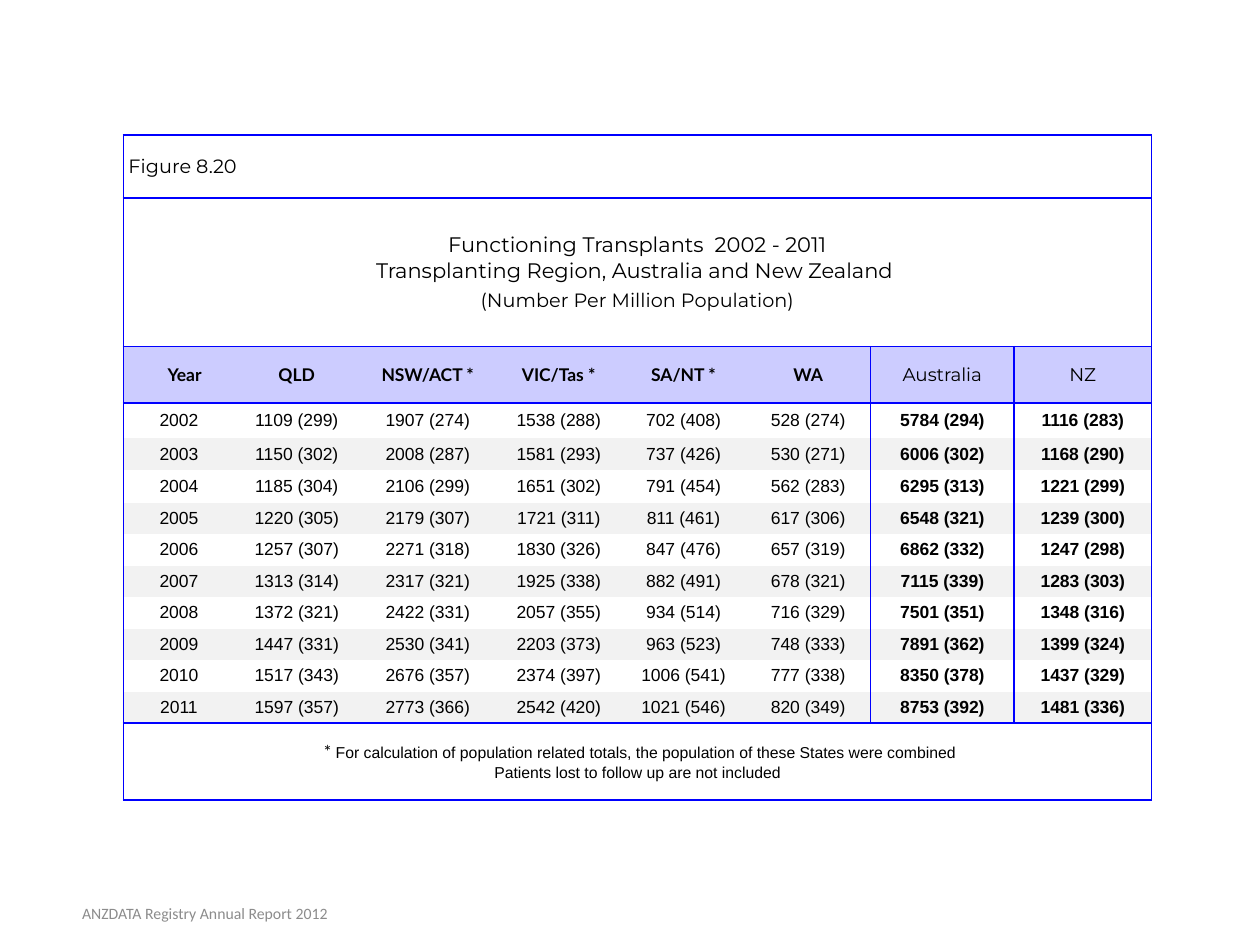
import pptx
import pptx.dml.color
import pptx.enum.text
import pptx.oxml
import pptx.oxml.ns
import pptx.util

Inches = pptx.util.Inches
Pt = pptx.util.Pt
CENTER = pptx.enum.text.PP_ALIGN.CENTER
MIDDLE = pptx.enum.text.MSO_ANCHOR.MIDDLE

RULE_BLUE = "0000FF"
HEADER_LILAC = "CCCCFF"
BAND_GREY = "F2F2F2"
NO_STYLE = "{2D5ABB26-0587-4C30-8999-92F81FD0307C}"

COLUMN_WIDTHS = [0.88, 0.99, 1.09, 0.99, 0.99, 0.99, 1.14, 1.09]
ROW_HEIGHTS = [0.5, 1.18, 0.45, 0.28, 0.25, 0.26] + [0.25] * 7 + [0.61]
HEADER_ROW, FIRST_YEAR_ROW, NOTE_ROW = 2, 3, 13
FULL_WIDTH_ROWS = (0, 1, NOTE_ROW)
COUNTRY_COLUMNS = (6, 7)

MONTSERRAT = {"name": "Montserrat", "size": Pt(11), "bold": False}
TITLE = {**MONTSERRAT, "size": Pt(12)}
COUNTRY = {**MONTSERRAT, "size": Pt(10.5)}
STATE = {"name": "Lato", "size": Pt(10), "bold": True}
NUMBER = {"name": "Arial", "size": Pt(10), "bold": False}
TOTAL = {**NUMBER, "bold": True}
NOTE = {**NUMBER, "size": Pt(9)}
ASTERISK = {**STATE, "bold": False}
FOOTER = {"name": "Calibri", "size": Pt(9), "bold": False}

REGIONS = ["Year", "QLD", "NSW/ACT *", "VIC/Tas *", "SA/NT *", "WA", "Australia", "NZ"]
TRANSPLANTS = [
    ["2002", "1109 (299)", "1907 (274)", "1538 (288)", "702 (408)", "528 (274)", "5784 (294)", "1116 (283)"],
    ["2003", "1150 (302)", "2008 (287)", "1581 (293)", "737 (426)", "530 (271)", "6006 (302)", "1168 (290)"],
    ["2004", "1185 (304)", "2106 (299)", "1651 (302)", "791 (454)", "562 (283)", "6295 (313)", "1221 (299)"],
    ["2005", "1220 (305)", "2179 (307)", "1721 (311)", "811 (461)", "617 (306)", "6548 (321)", "1239 (300)"],
    ["2006", "1257 (307)", "2271 (318)", "1830 (326)", "847 (476)", "657 (319)", "6862 (332)", "1247 (298)"],
    ["2007", "1313 (314)", "2317 (321)", "1925 (338)", "882 (491)", "678 (321)", "7115 (339)", "1283 (303)"],
    ["2008", "1372 (321)", "2422 (331)", "2057 (355)", "934 (514)", "716 (329)", "7501 (351)", "1348 (316)"],
    ["2009", "1447 (331)", "2530 (341)", "2203 (373)", "963 (523)", "748 (333)", "7891 (362)", "1399 (324)"],
    ["2010", "1517 (343)", "2676 (357)", "2374 (397)", "1006 (541)", "777 (338)", "8350 (378)", "1437 (329)"],
    ["2011", "1597 (357)", "2773 (366)", "2542 (420)", "1021 (546)", "820 (349)", "8753 (392)", "1481 (336)"],
]


def color(value):
    """Turn a hex string into a colour."""
    return pptx.dml.color.RGBColor.from_string(value)


def set_values(target, values):
    """Set each named attribute of the target."""
    for name, value in values.items():
        setattr(target, name, value)


def write_line(paragraph, parts, ink="000000", **layout):
    """Fill a paragraph with (wording, font values) parts."""
    set_values(paragraph, layout)
    for wording, font_values in parts:
        run = paragraph.add_run()
        run.text = wording
        set_values(run.font, font_values)
        run.font.color.rgb = color(ink)


def draw_rules(cell, row, column):
    """Rule the cell edges that divide the sections of the table."""
    full_width = row in FULL_WIDTH_ROWS
    ruled = {
        "L": column == 0 or (not full_width and column in COUNTRY_COLUMNS),
        "R": column == 7 or (not full_width and column + 1 in COUNTRY_COLUMNS),
        "T": row <= FIRST_YEAR_ROW or row == NOTE_ROW,
        "B": row <= HEADER_ROW or row >= NOTE_ROW - 1,
    }
    if full_width:
        ruled["R"] = True
    properties = cell._tc.get_or_add_tcPr()
    for side, visible in ruled.items():
        width = Pt(1) if visible else 0
        paint = f'<a:solidFill><a:srgbClr val="{RULE_BLUE}"/></a:solidFill>' if visible else "<a:noFill/>"
        namespace = pptx.oxml.ns.nsdecls("a")
        properties.append(pptx.oxml.parse_xml(f'<a:ln{side} {namespace} w="{width}">{paint}</a:ln{side}>'))


def fill_cell(cell, row):
    """Colour the header row and every second year."""
    if row == HEADER_ROW or (FIRST_YEAR_ROW < row < NOTE_ROW and row % 2 == 0):
        cell.fill.solid()
        cell.fill.fore_color.rgb = color(HEADER_LILAC if row == HEADER_ROW else BAND_GREY)
    else:
        cell.fill.background()


def add_registry_table(slide):
    """Add the ruled table frame and return its table."""
    frame = slide.shapes.add_table(
        len(ROW_HEIGHTS), len(COLUMN_WIDTHS), Inches(0.98), Inches(1.07),
        Inches(sum(COLUMN_WIDTHS)), Inches(sum(ROW_HEIGHTS)))
    table = frame.table
    set_values(table, {"first_row": False, "horz_banding": False})
    table._tbl.tblPr.find(pptx.oxml.ns.qn("a:tableStyleId")).text = NO_STYLE
    for column, width in zip(table.columns, COLUMN_WIDTHS):
        column.width = Inches(width)
    margins = {"margin_left": Inches(0.04), "margin_right": Inches(0.04),
               "margin_top": Inches(0.02), "margin_bottom": Inches(0.02)}
    for row, height in enumerate(ROW_HEIGHTS):
        table.rows[row].height = Inches(height)
        for column in range(len(COLUMN_WIDTHS)):
            cell = table.cell(row, column)
            set_values(cell, {**margins, "vertical_anchor": MIDDLE})
            draw_rules(cell, row, column)
            fill_cell(cell, row)
    for row in FULL_WIDTH_ROWS:
        table.cell(row, 0).merge(table.cell(row, len(COLUMN_WIDTHS) - 1))
    return table


def write_headings(table):
    """Write the figure number, title lines and notes."""
    write_line(table.cell(0, 0).text_frame.paragraphs[0], [("Figure 8.20", MONTSERRAT)])
    title = table.cell(1, 0).text_frame
    write_line(title.paragraphs[0], [("Functioning Transplants  2002 - 2011", TITLE)], alignment=CENTER)
    write_line(title.add_paragraph(), [("Transplanting Region, Australia and New Zealand ", TITLE)],
               alignment=CENTER)
    write_line(title.add_paragraph(), [("(Number Per Million Population)", MONTSERRAT)],
               alignment=CENTER, space_before=Pt(3))
    notes = table.cell(NOTE_ROW, 0).text_frame
    combined = "For calculation of population related totals, the population of these States were combined"
    write_line(notes.paragraphs[0], [(" * ", ASTERISK), (combined, NOTE)], alignment=CENTER)
    write_line(notes.add_paragraph(), [("Patients lost to follow up are not included", NOTE)],
               alignment=CENTER, space_before=Pt(1), space_after=Pt(2))


def write_counts(table):
    """Write the region headers and the yearly counts."""
    for row, values in enumerate([REGIONS] + TRANSPLANTS, HEADER_ROW):
        plain, strong = (STATE, COUNTRY) if row == HEADER_ROW else (NUMBER, TOTAL)
        layout = {} if row == HEADER_ROW else {"space_after": Pt(14)}
        for column, value in enumerate(values):
            font_values = strong if column in COUNTRY_COLUMNS else plain
            write_line(table.cell(row, column).text_frame.paragraphs[0], [(value, font_values)],
                       alignment=CENTER, **layout)
    table.cell(HEADER_ROW, 0).margin_left = Inches(0.13)


def add_footer(slide):
    """Add the report name at the foot of the slide."""
    footer = slide.shapes.add_textbox(Inches(0.04), Inches(7.05), Inches(3.17), Inches(0.4)).text_frame
    set_values(footer, {"word_wrap": True, "vertical_anchor": MIDDLE})
    write_line(footer.paragraphs[0], [("ANZDATA Registry Annual Report 2012", FOOTER)],
               ink="8C8C8C", alignment=CENTER)


def main():
    """Build the transplant table slide."""
    presentation = pptx.Presentation()
    set_values(presentation, {"slide_width": Inches(10), "slide_height": Inches(7.5)})
    slide = presentation.slides.add_slide(presentation.slide_layouts[6])
    table = add_registry_table(slide)
    write_headings(table)
    write_counts(table)
    add_footer(slide)
    presentation.save("out.pptx")


if __name__ == "__main__":
    main()
